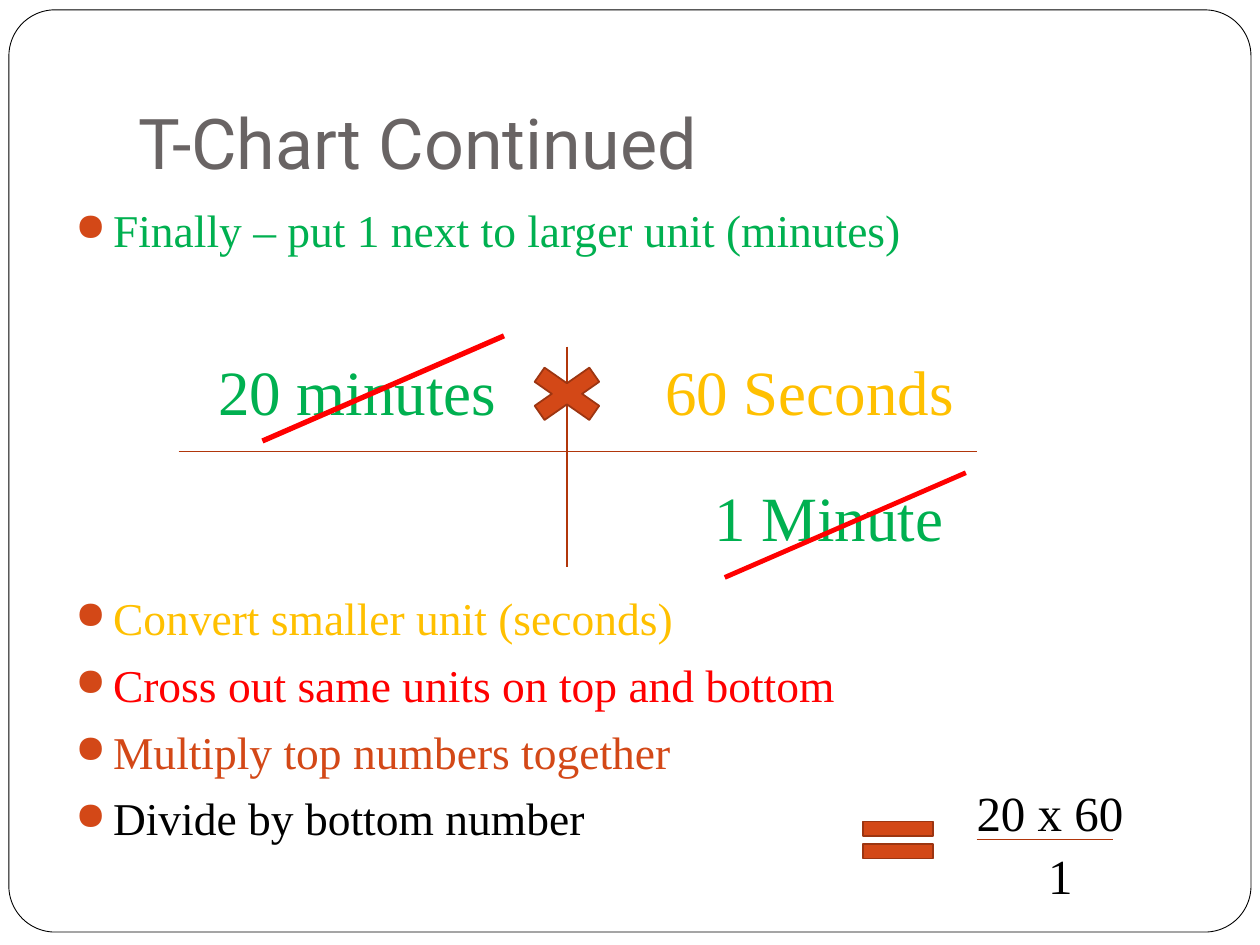
from lxml import etree
from pptx import Presentation
from pptx.dml.color import RGBColor
from pptx.enum.shapes import MSO_CONNECTOR, MSO_SHAPE
from pptx.enum.text import MSO_ANCHOR, MSO_AUTO_SIZE, PP_ALIGN
from pptx.oxml.ns import qn
from pptx.util import Cm, Pt

STRAIGHT = MSO_CONNECTOR.STRAIGHT
ROUNDED, TIMES, EQUALS = (MSO_SHAPE.ROUNDED_RECTANGLE, MSO_SHAPE.MATH_MULTIPLY,
                          MSO_SHAPE.MATH_EQUAL)
LEFT, CENTER, RIGHT = PP_ALIGN.LEFT, PP_ALIGN.CENTER, PP_ALIGN.RIGHT
BOTTOM = MSO_ANCHOR.BOTTOM
GROW = MSO_AUTO_SIZE.SHAPE_TO_FIT_TEXT

WHITE = RGBColor(0xFF, 0xFF, 0xFF)
BLACK = RGBColor(0, 0, 0)
GRAY = RGBColor(0x69, 0x64, 0x64)
GREEN = RGBColor(0x00, 0xB0, 0x50)
AMBER = RGBColor(0xFF, 0xC0, 0x00)
RED = RGBColor(0xFF, 0, 0)
ORANGE = RGBColor(0xD3, 0x48, 0x17)
RUST = RGBColor(0xB1, 0x36, 0x0B)
DARK_RUST = RGBColor(0x9C, 0x35, 0x11)

SERIF = "Times New Roman"
INDENT = Cm(0.76)


def add_symbol(slide, kind, box, fill, outline, width):
    """Add a filled preset shape with an outline."""
    symbol = slide.shapes.add_shape(kind, *map(Cm, box))
    symbol.shadow.inherit = False
    symbol.fill.solid()
    symbol.fill.fore_color.rgb = fill
    symbol.line.color.rgb = outline
    symbol.line.width = Pt(width)
    return symbol


def add_rule(slide, ends, color, width):
    """Add a straight line from (x, y) to (x, y)."""
    rule = slide.shapes.add_connector(STRAIGHT, *map(Cm, ends))
    rule.line.color.rgb = color
    rule.line.width = Pt(width)
    etree.SubElement(rule._element.spPr, qn("a:effectLst"))


def add_frame(slide, box):
    """Add a wrapping text box and return its text frame."""
    frame = slide.shapes.add_textbox(*map(Cm, box)).text_frame
    frame.word_wrap = True
    return frame


def write(paragraph, text, size, color, font=SERIF):
    run = paragraph.add_run()
    run.text = text
    formats = {"name": font, "size": Pt(size)}
    for attribute, value in formats.items():
        setattr(run.font, attribute, value)
    run.font.color.rgb = color


def add_label(slide, box, text, size, color, align):
    """Add one line of text in a box that grows with it."""
    frame = add_frame(slide, box)
    frame.auto_size = GROW
    frame.paragraphs[0].alignment = align
    write(frame.paragraphs[0], text, size, color)


def add_bullet(paragraph):
    properties = paragraph._p.get_or_add_pPr()
    properties.set("marL", str(INDENT))
    properties.set("indent", str(-INDENT))
    bullet_color = etree.SubElement(properties, qn("a:buClr"))
    etree.SubElement(bullet_color, qn("a:srgbClr"), val=str(ORANGE))
    etree.SubElement(properties, qn("a:buSzPct"), val="85000")
    etree.SubElement(properties, qn("a:buChar"), char="●")


def add_steps(slide, box, steps):
    """Add a bulleted list of (text, color) steps."""
    frame = add_frame(slide, box)
    for index, (text, color) in enumerate(steps):
        paragraph = frame.add_paragraph() if index else frame.paragraphs[0]
        paragraph.space_before = Pt(7)
        add_bullet(paragraph)
        write(paragraph, text, 26, color)


def add_title(slide, text):
    frame = add_frame(slide, (2.54, 0.76, 21.59, 3.18))
    formats = {"vertical_anchor": BOTTOM, "margin_bottom": Cm(0.25)}
    for attribute, value in formats.items():
        setattr(frame, attribute, value)
    frame.paragraphs[0].alignment = LEFT
    write(frame.paragraphs[0], text, 40, GRAY, "Roboto")


def main():
    presentation = Presentation()
    presentation.slide_width, presentation.slide_height = Cm(25.4), Cm(19.05)
    slide = presentation.slides.add_slide(presentation.slide_layouts[6])

    # Rounded page border and title
    border = add_symbol(slide, ROUNDED, (0.18, 0.2, 25.04, 18.59), WHITE, BLACK, 0.5)
    border.adjustments[0] = 0.05
    add_title(slide, "T-Chart Continued")

    # Steps above and below the T-chart
    add_steps(slide, (1.27, 3.95, 22.86, 1.5),
              [("Finally – put 1 next to larger unit (minutes)", GREEN)])
    add_steps(slide, (1.27, 11.77, 22.86, 6), [
        ("Convert smaller unit (seconds)", AMBER),
        ("Cross out same units on top and bottom", RED),
        ("Multiply top numbers together", ORANGE),
        ("Divide by bottom number", BLACK),
    ])

    # T-chart lines
    add_rule(slide, (3.6, 9.1, 19.69, 9.1), RUST, 0.75)
    add_rule(slide, (11.43, 6.99, 11.43, 11.43), RUST, 0.75)

    # T-chart quantities and the fraction's numbers
    for box, text, size, color, align in [
        ((3.6, 6.99, 7.2, 1.8), "20 minutes", 36, GREEN, CENTER),
        ((12.28, 9.53, 6.99, 1.8), "1 Minute", 36, GREEN, RIGHT),
        ((12.49, 6.99, 6.99, 1.8), "60 Seconds", 36, AMBER, RIGHT),
        ((19.05, 15.66, 4.23, 1.45), "20 x 60", 28, BLACK, CENTER),
        ((19.26, 16.93, 4.23, 1.45), "1", 28, BLACK, CENTER),
    ]:
        add_label(slide, box, text, size, color, align)

    # Operators and fraction bar
    add_symbol(slide, TIMES, (10.37, 7.2, 2.12, 1.48), ORANGE, DARK_RUST, 1)
    add_symbol(slide, EQUALS, (17.15, 16.3, 1.91, 1.27), ORANGE, DARK_RUST, 1)
    add_rule(slide, (19.69, 16.93, 22.44, 16.93), RUST, 0.75)

    # Strokes crossing out the shared unit
    add_rule(slide, (5.29, 8.89, 10.16, 6.77), RED, 3)
    add_rule(slide, (14.61, 11.64, 19.47, 9.53), RED, 2.75)

    presentation.save("out.pptx")


if __name__ == "__main__":
    main()
